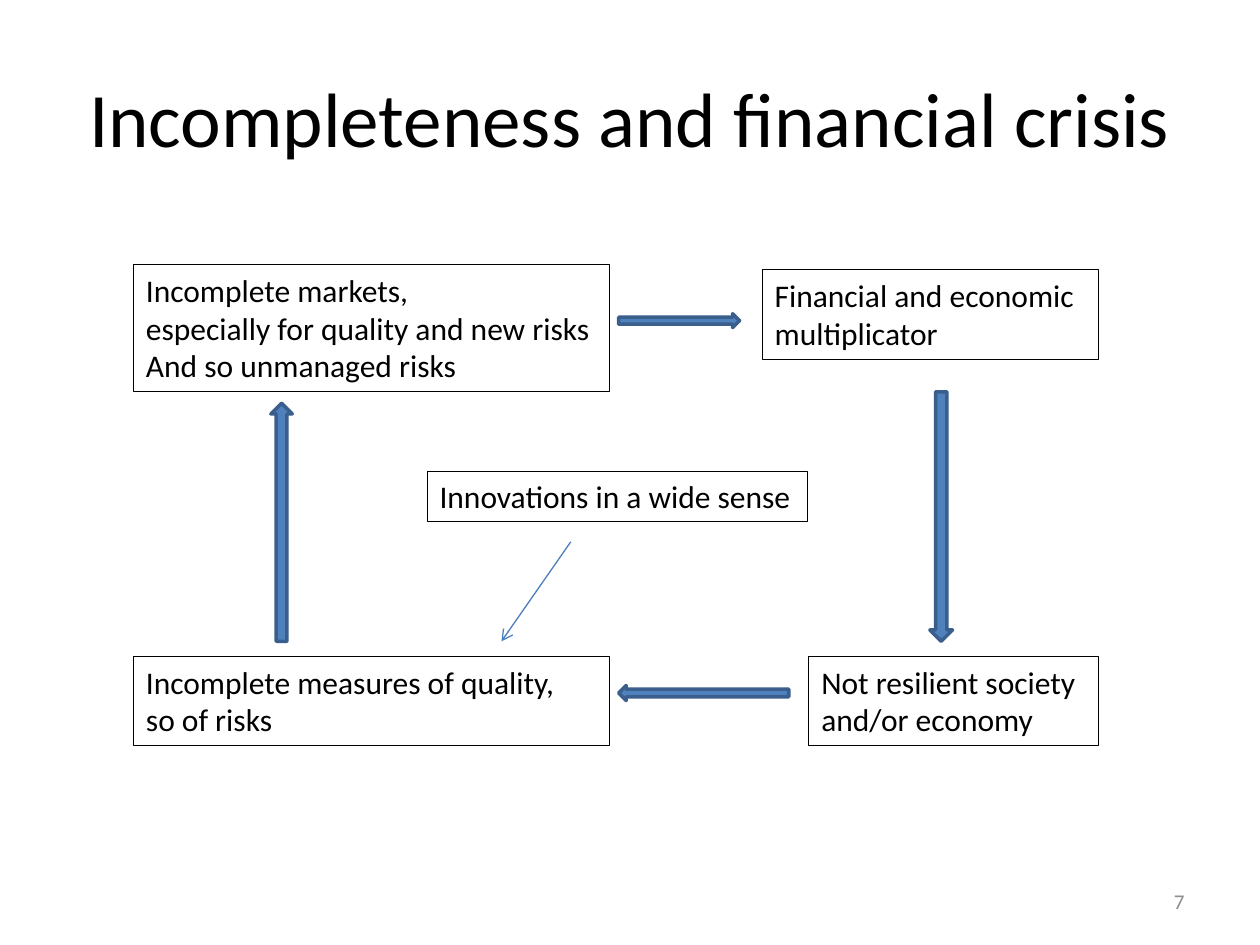
from lxml import etree
from pptx import Presentation
from pptx.dml.color import RGBColor
from pptx.enum.shapes import MSO_CONNECTOR, MSO_SHAPE
from pptx.enum.text import MSO_ANCHOR, PP_ALIGN
from pptx.oxml.ns import qn
from pptx.util import Inches, Pt

LEFT, CENTER, RIGHT = PP_ALIGN.LEFT, PP_ALIGN.CENTER, PP_ALIGN.RIGHT
TOP, MIDDLE = MSO_ANCHOR.TOP, MSO_ANCHOR.MIDDLE
RIGHT_ARROW, DOWN_ARROW = MSO_SHAPE.RIGHT_ARROW, MSO_SHAPE.DOWN_ARROW
LEFT_ARROW, UP_ARROW = MSO_SHAPE.LEFT_ARROW, MSO_SHAPE.UP_ARROW
STRAIGHT = MSO_CONNECTOR.STRAIGHT
TITLE_ONLY = 5

THEME = {
    "font": "Calibri",
    "title": 44, "body": 18, "number": 12,
    "ink": "000000", "muted": "8C8C8C",
    "arrow": "4F81BD", "arrow_edge": "3A5F8C", "pointer": "4B7EBC",
}

# Content: "\n" breaks a line, each list item is a paragraph
TITLE = "Incompleteness and financial crisis"
PAGE = "7"
LEFT_X, LEFT_W, RIGHT_EDGE = 1.06, 3.78, 8.72
LOWER_Y, TWO_LINES = 5.21, 0.71
# (paragraphs, left, top, width, height, wraps)
STAGES = [
    (["Incomplete markets,\nespecially for quality and new risks",
      "And so unmanaged risks"], LEFT_X, 2.1, LEFT_W, 1.01, True),
    (["Financial and economic\nmultiplicator"],
     RIGHT_EDGE - 2.67, 2.14, 2.67, TWO_LINES, False),
    (["Not resilient society\nand/or economy"],
     RIGHT_EDGE - 2.3, LOWER_Y, 2.3, TWO_LINES, False),
    (["Incomplete measures of quality,\nso of risks"],
     LEFT_X, LOWER_Y, LEFT_W, TWO_LINES, True),
    (["Innovations in a wide sense"], 3.39, 3.74, 3.02, 0.4, False),
]
# Clockwise cycle: (preset, left, top, width, height)
CYCLE = [
    (RIGHT_ARROW, 4.91, 2.49, 0.96, 0.11),
    (DOWN_ARROW, 7.38, 3.11, 0.18, 1.98),
    (LEFT_ARROW, 4.91, 5.44, 1.35, 0.12),
    (UP_ARROW, 2.15, 3.2, 0.17, 1.89),
]
INNOVATION_POINTER = (4.53, 4.3, 3.98, 5.09)


def color(name):
    return RGBColor.from_string(THEME[name])


def inches(*values):
    return [Inches(value) for value in values]


def write(frame, paragraphs, size="body", ink="ink", align=LEFT,
          anchor=TOP, wrap=True):
    frame.word_wrap = wrap
    frame.vertical_anchor = anchor
    for index, text in enumerate(paragraphs):
        paragraph = frame.add_paragraph() if index else frame.paragraphs[0]
        paragraph.text = text
        paragraph.alignment = align
        for run in paragraph.runs:
            run.font.name = THEME["font"]
            run.font.size = Pt(THEME[size])
            run.font.color.rgb = color(ink)


def add_stage(slide, paragraphs, left, top, width, height, wrap):
    box = slide.shapes.add_textbox(*inches(left, top, width, height))
    box.line.color.rgb = color("ink")
    box.line.width = Pt(0.5)
    write(box.text_frame, paragraphs, wrap=wrap)


def add_block_arrow(slide, preset, *bounds):
    arrow = slide.shapes.add_shape(preset, *inches(*bounds))
    arrow.shadow.inherit = False
    arrow.fill.solid()
    arrow.fill.fore_color.rgb = color("arrow")
    arrow.line.color.rgb = color("arrow_edge")
    arrow.line.width = Pt(2)


def add_pointer(slide, *ends):
    pointer = slide.shapes.add_connector(STRAIGHT, *inches(*ends))
    pointer.line.color.rgb = color("pointer")
    pointer.line.width = Pt(0.75)
    etree.SubElement(pointer.line._get_or_add_ln(), qn("a:tailEnd"), type="arrow")
    etree.SubElement(pointer._element.spPr, qn("a:effectLst"))


def main():
    deck = Presentation()
    deck.slide_width, deck.slide_height = inches(10, 7.5)
    slide = deck.slides.add_slide(deck.slide_layouts[TITLE_ONLY])

    # Title and page number
    title = slide.shapes.title
    title.left, title.top, title.width, title.height = inches(0.5, 0.3, 9, 1.25)
    write(title.text_frame, [TITLE], size="title", align=CENTER, anchor=MIDDLE)
    number = slide.shapes.add_textbox(*inches(7.17, 6.95, 2.33, 0.4))
    write(number.text_frame, [PAGE], size="number", ink="muted",
          align=RIGHT, anchor=MIDDLE)

    # Crisis cycle
    for stage in STAGES:
        add_stage(slide, *stage)
    for arrow in CYCLE:
        add_block_arrow(slide, *arrow)
    add_pointer(slide, *INNOVATION_POINTER)

    deck.save("out.pptx")


if __name__ == "__main__":
    main()
